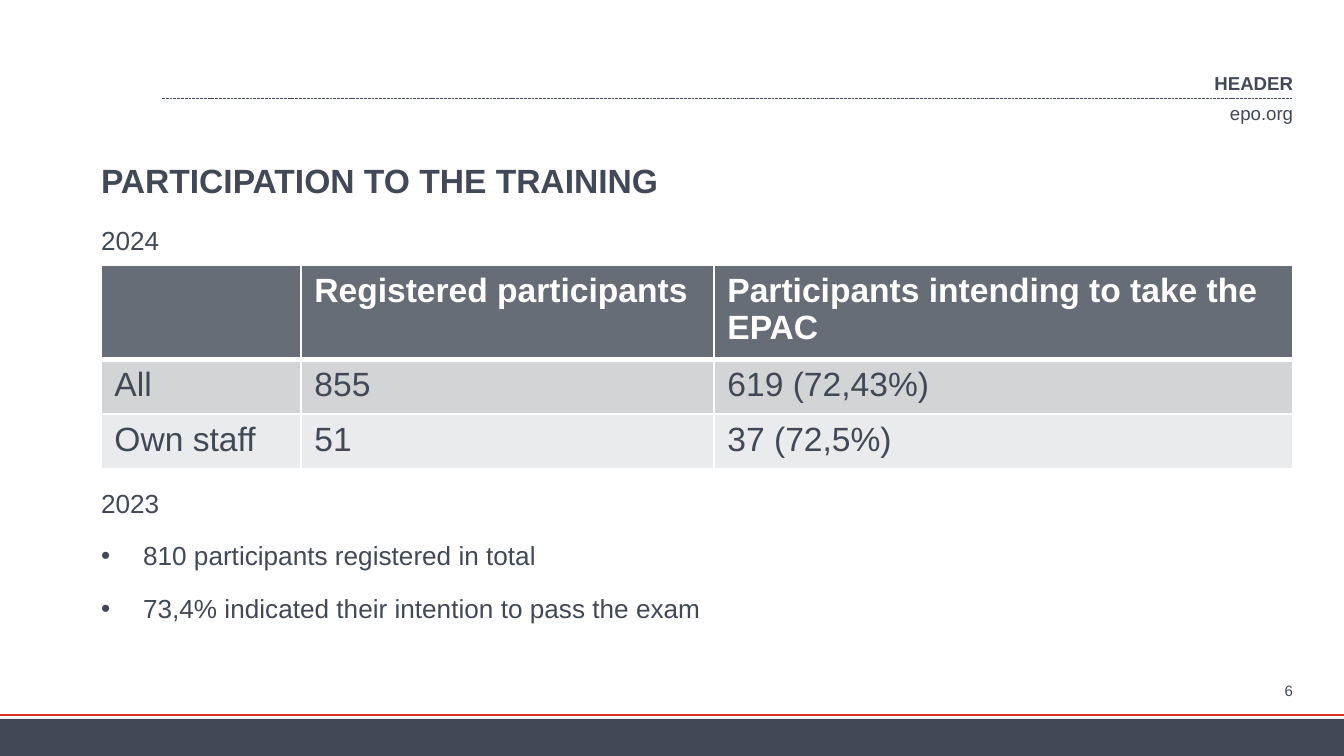
from lxml import etree
from pptx import Presentation
from pptx.dml.color import RGBColor
from pptx.enum.dml import MSO_LINE
from pptx.enum.shapes import MSO_CONNECTOR, MSO_SHAPE
from pptx.enum.text import MSO_ANCHOR, PP_ALIGN
from pptx.oxml.ns import qn
from pptx.util import Pt

LEFT, RIGHT = PP_ALIGN.LEFT, PP_ALIGN.RIGHT
TOP, MIDDLE, BOTTOM = MSO_ANCHOR.TOP, MSO_ANCHOR.MIDDLE, MSO_ANCHOR.BOTTOM
STRAIGHT, RECT = MSO_CONNECTOR.STRAIGHT, MSO_SHAPE.RECTANGLE
DASH = MSO_LINE.SQUARE_DOT

INK = RGBColor(0x40, 0x49, 0x55)
RED = RGBColor(0xD9, 0x33, 0x17)
WHITE = RGBColor(0xFF, 0xFF, 0xFF)
HEAD = RGBColor(0x66, 0x6D, 0x77)
BANDS = [RGBColor(0xD3, 0xD4, 0xD6), RGBColor(0xEA, 0xEB, 0xEC)]

PX = 914400 / 134.4


def px(n):
    return round(n * PX)


def write(para, text, size, color=INK, bold=False):
    run = para.add_run()
    run.text = text
    font = run.font
    font.name, font.size, font.bold = "Arial", Pt(size), bold
    font.color.rgb = color


prs = Presentation()
prs.slide_width, prs.slide_height = px(1344), px(756)
slide = prs.slides.add_slide(prs.slide_layouts[6])
shapes = slide.shapes

# Header rule and footer band
band = shapes.add_shape(RECT, 0, px(719), px(1344), px(37))
band.shadow.inherit = False
band.fill.solid()
band.fill.fore_color.rgb = INK
band.line.fill.background()

for x1, x2, y, color, width, dash in [
    (162, 1293, 99, INK, 0.5, DASH),
    (0, 1344, 715, RED, 1.5, None),
]:
    rule = shapes.add_connector(STRAIGHT, px(x1), px(y), px(x2), px(y))
    rule.line.color.rgb = color
    rule.line.width = Pt(width)
    rule.line.dash_style = dash
    etree.SubElement(rule._element.spPr, qn("a:effectLst"))

# Text boxes: place, anchor, alignment, size, bold, wrap, lines (text, bullet)
for x, y, w, h, anchor, align, size, bold, wrap, lines in [
    (1230, 101, 63, 23, MIDDLE, RIGHT, 10, False, False, [("epo.org", False)]),
    (500, 71, 793, 24, MIDDLE, RIGHT, 10, True, False, [("HEADER", False)]),
    (1214, 682, 79, 18, MIDDLE, RIGHT, 8, False, True, [("6", False)]),
    (101, 118, 1192, 82, BOTTOM, LEFT, 18, True, True,
     [("PARTICIPATION TO THE TRAINING", False)]),
    (101, 218, 1192, 38, TOP, LEFT, 14, False, True, [("2024", False)]),
    (101, 481, 1192, 190, TOP, LEFT, 14, False, True, [
        ("2023", False),
        ("810 participants registered in total", True),
        ("73,4% indicated their intention to pass the exam", True),
    ]),
]:
    frame = shapes.add_textbox(px(x), px(y), px(w), px(h)).text_frame
    frame.margin_left = frame.margin_right = 0
    frame.margin_top = frame.margin_bottom = 0
    frame.word_wrap = wrap
    frame.vertical_anchor = anchor
    for i, (text, bullet) in enumerate(lines):
        para = frame.add_paragraph() if i else frame.paragraphs[0]
        para.alignment = align
        if bullet:
            props = para._p.get_or_add_pPr()
            props.set("marL", str(px(42)))
            props.set("indent", str(-px(42)))
            etree.SubElement(props, qn("a:buFont"), typeface="Arial")
            etree.SubElement(props, qn("a:buChar"), char="•")
        if anchor == TOP:
            para.line_spacing = 1.2
        if i:
            para.space_before = Pt(8)
        write(para, text, size, bold=bold)

# Participation table
cells = [
    ["", "Registered participants", "Participants intending to take the EPAC"],
    ["All", "855", "619 (72,43%)"],
    ["Own staff", "51", "37 (72,5%)"],
]
grid = shapes.add_table(3, 3, px(101), px(265), px(1192), px(198)).table
grid.horz_banding = False
for col, width in zip(grid.columns, [200, 413, 579]):
    col.width = px(width)
for row, height in zip(grid.rows, [88, 55, 55]):
    row.height = px(height)

for r, line in enumerate(cells):
    for c, text in enumerate(line):
        cell = grid.cell(r, c)
        props = cell._tc.get_or_add_tcPr()
        for side in "LRTB":
            thick = (r, side) in [(0, "B"), (1, "T")]
            edge = etree.SubElement(props, qn("a:ln" + side),
                                    w=str(Pt(3 if thick else 1)))
            fill = etree.SubElement(edge, qn("a:solidFill"))
            etree.SubElement(fill, qn("a:srgbClr"), val=str(WHITE))
        cell.fill.solid()
        cell.fill.fore_color.rgb = BANDS[r - 1] if r else HEAD
        if text:
            write(cell.text_frame.paragraphs[0], text, 18,
                  INK if r else WHITE, r == 0)

prs.save("out.pptx")
